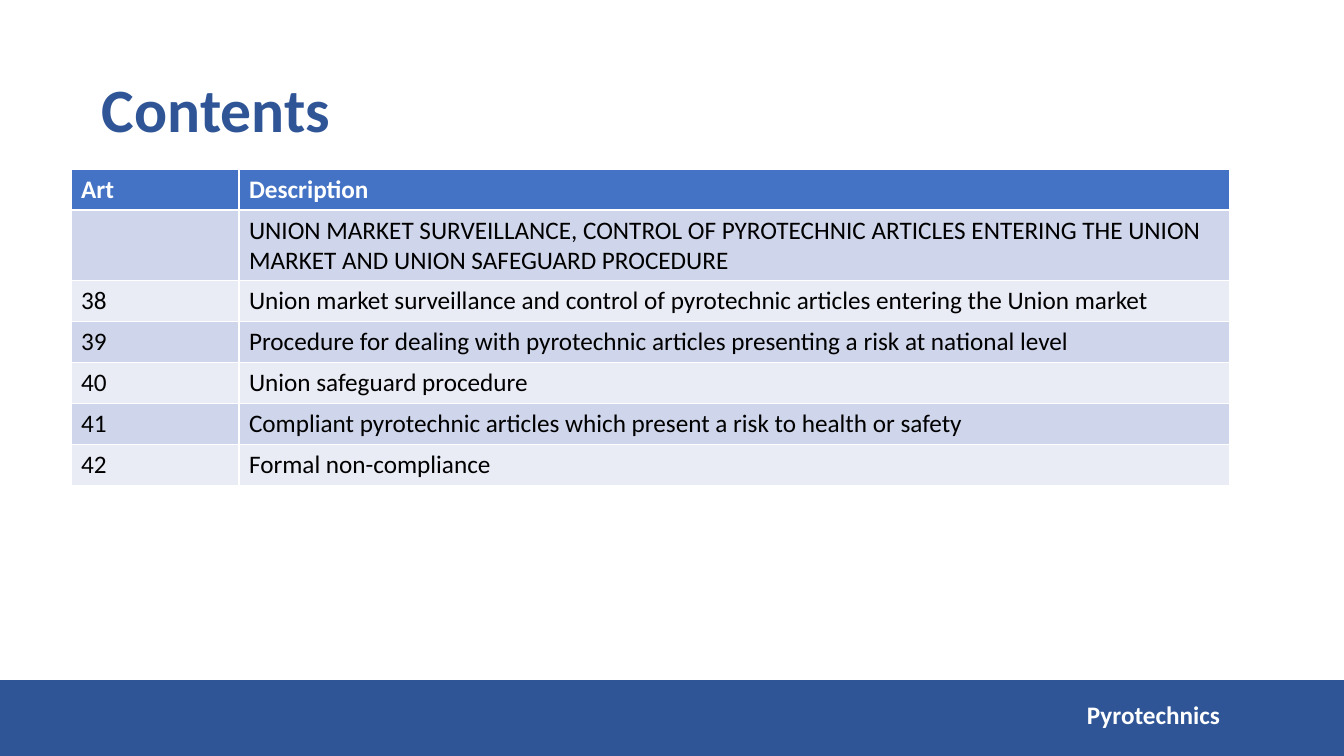
"""Build the Pyrotechnics contents slide."""
from pptx import Presentation
from pptx.dml.color import RGBColor
from pptx.enum.shapes import MSO_SHAPE
from pptx.enum.text import MSO_ANCHOR, PP_ALIGN
from pptx.util import Pt

TITLE = "Contents"
FOOTER = "Pyrotechnics"
ROWS = [
    ("Art", "Description"),
    ("", "UNION MARKET SURVEILLANCE, CONTROL OF PYROTECHNIC ARTICLES ENTERING "
         "THE UNION MARKET AND UNION SAFEGUARD PROCEDURE"),
    ("38", "Union market surveillance and control of pyrotechnic articles entering the Union market"),
    ("39", "Procedure for dealing with pyrotechnic articles presenting a risk at national level"),
    ("40", "Union safeguard procedure"),
    ("41", "Compliant pyrotechnic articles which present a risk to health or safety"),
    ("42", "Formal non-compliance"),
]

NAVY = RGBColor(0x2F, 0x55, 0x97)
HEADER_BLUE = RGBColor(0x44, 0x72, 0xC4)
BAND_DARK = RGBColor(0xCF, 0xD5, 0xEA)
BAND_LIGHT = RGBColor(0xE9, 0xEB, 0xF5)
WHITE = RGBColor(0xFF, 0xFF, 0xFF)
BLACK = RGBColor(0x00, 0x00, 0x00)

SLIDE_WIDTH, SLIDE_HEIGHT = 1344, 756
COLUMN_WIDTHS = (168, 991)
ROW_HEIGHT = 41
BAR_TOP = 681


def px(length):
    """Turn px into EMU."""
    return round(length * 914400 / 100.8)


def style_paragraph(paragraph, size, color, bold):
    """Set the font of a whole paragraph."""
    font = paragraph.font
    font.name = "Calibri"
    font.size = Pt(size)
    font.bold = bold
    font.color.rgb = color


def add_text(slide, text, box, size, color):
    """Add a bold line of text and return its frame."""
    frame = slide.shapes.add_textbox(*map(px, box)).text_frame
    frame.word_wrap = True
    frame.text = text
    style_paragraph(frame.paragraphs[0], size, color, True)
    return frame


def add_contents_table(slide):
    """Add the table of articles with banded rows."""
    table = slide.shapes.add_table(
        len(ROWS), len(COLUMN_WIDTHS), px(71), px(169),
        px(sum(COLUMN_WIDTHS)), px(ROW_HEIGHT * len(ROWS))).table
    for column, width in zip(table.columns, COLUMN_WIDTHS):
        column.width = px(width)
    for row_index, texts in enumerate(ROWS):
        is_header = row_index == 0
        band = BAND_DARK if row_index % 2 else BAND_LIGHT
        for column_index, text in enumerate(texts):
            cell = table.cell(row_index, column_index)
            cell.text = text
            cell.fill.solid()
            cell.fill.fore_color.rgb = HEADER_BLUE if is_header else band
            style_paragraph(cell.text_frame.paragraphs[0], 18,
                            WHITE if is_header else BLACK, is_header)


def add_footer(slide):
    """Add the bottom bar and its label."""
    bar = slide.shapes.add_shape(
        MSO_SHAPE.RECTANGLE, 0, px(BAR_TOP), px(SLIDE_WIDTH), px(SLIDE_HEIGHT - BAR_TOP))
    bar.shadow.inherit = False
    bar.fill.solid()
    bar.fill.fore_color.rgb = NAVY
    bar.line.color.rgb = NAVY
    bar.line.width = Pt(1)
    label = add_text(slide, FOOTER, (558, 694, 672, 40), 18, WHITE)
    label.paragraphs[0].alignment = PP_ALIGN.RIGHT


def main():
    """Build and save the presentation."""
    presentation = Presentation()
    presentation.slide_width = px(SLIDE_WIDTH)
    presentation.slide_height = px(SLIDE_HEIGHT)
    slide = presentation.slides.add_slide(presentation.slide_layouts[6])
    title = add_text(slide, TITLE, (92, 40, 1159, 146), 44, NAVY)
    title.vertical_anchor = MSO_ANCHOR.MIDDLE
    title.paragraphs[0].line_spacing = 0.9
    add_contents_table(slide)
    add_footer(slide)
    presentation.save("out.pptx")


if __name__ == "__main__":
    main()
